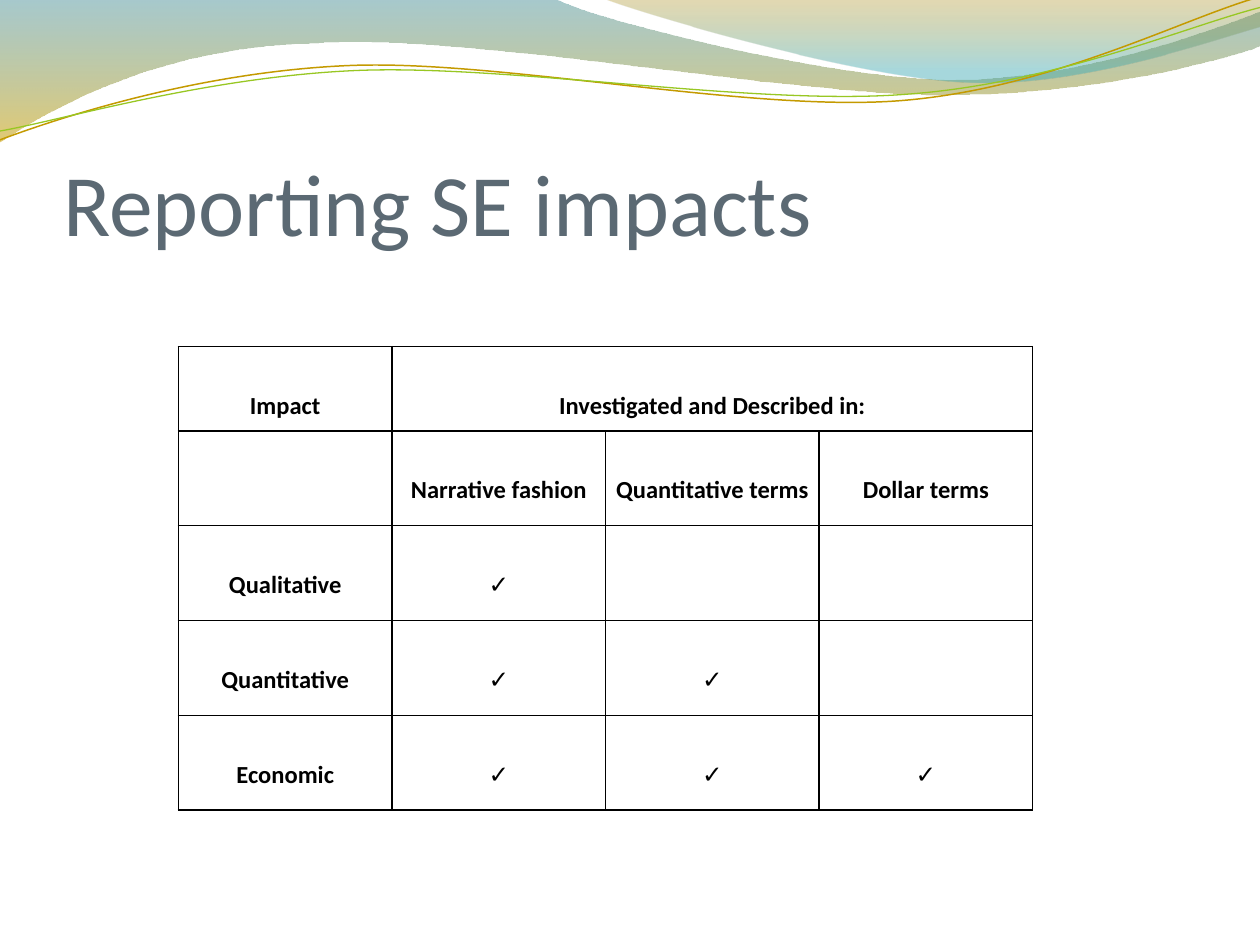
from math import cos, radians, sin

from lxml.etree import SubElement
from pptx import Presentation
from pptx.dml.color import RGBColor
from pptx.enum.text import MSO_ANCHOR, MSO_AUTO_SIZE, PP_ALIGN
from pptx.oxml import parse_xml
from pptx.oxml.ns import nsdecls, qn
from pptx.util import Inches, Pt

FONT = "Calibri"
BLACK = RGBColor(0, 0, 0)
SLATE = RGBColor(0x5B, 0x69, 0x73)
TEAL = RGBColor(0x3B, 0x88, 0x90)
GOLD = RGBColor(0xC9, 0x9E, 0x00)
OLIVE = RGBColor(0xA4, 0x81, 0x00)
AQUA = RGBColor(0x3E, 0xA9, 0xB4)
AMBER = RGBColor(0xC4, 0x9A, 0x00)
GREEN = RGBColor(0x98, 0xC7, 0x23)

TITLE = "Reporting SE impacts"
CHECK = "✓"
ROWS = [
    ["Impact", "Investigated and Described in:", "", ""],
    ["", "Narrative fashion", "Quantitative terms", "Dollar terms"],
    ["Qualitative", CHECK, "", ""],
    ["Quantitative", CHECK, CHECK, ""],
    ["Economic", CHECK, CHECK, CHECK],
]
TABLE_LEFT, TABLE_TOP = Pt(102), Inches(2.75)
TABLE_WIDTH, TABLE_HEIGHT = Inches(6.78), Inches(3.68)
HEADER_HEIGHT = Inches(0.67)

# Each step is a point (x, y) or a cubic curve (x1, y1, x2, y2, x, y).
BANDS = [
    ([(0, 0), (4.4, -0.01), (4.76, 0.17, 6.64, 0.63, 7.58, 0.63),
      (8.53, 0.63, 9.58, 0.26, 10, 0.09), (10.01, 0.36),
      (9.83, 0.44, 8.7, 0.76, 7.46, 0.75), (6.22, 0.75, 3.82, 0.28, 2.57, 0.34),
      (1.29, 0.36, 0.46, 0.83, -0.01, 1.13), (0, 0)],
     [(0, TEAL, 45), (1, GOLD, 55)]),
    ([(4.79, -0.01), (5.09, 0.11, 6.82, 0.62, 7.69, 0.65),
      (8.56, 0.69, 9.61, 0.32, 10, 0.21), (10, 0), (4.79, -0.01)],
     [(0, OLIVE, 30), (0.8, AQUA, 45)]),
]
WAVE_TILT = -2.7
WAVES = [
    ([(0, 1.11), (0.48, 0.93, 1.58, 0.57, 2.77, 0.52),
      (3.95, 0.47, 5.93, 0.89, 7.13, 0.8), (8.33, 0.71, 9.38, 0.15, 9.98, -0.02)],
     (4.99, 0.58), AMBER, 0.85),
    ([(0, 1.04), (0.47, 0.96, 1.64, 0.61, 2.83, 0.56),
      (4.03, 0.51, 5.97, 0.84, 7.17, 0.75), (8.36, 0.67, 9.41, 0.21, 10, 0.06)],
     (5, 0.59), GREEN, 0.75),
]


def add_outline(s, steps, close):
    (start, *rest) = [(Inches(x), Inches(y)) for step in steps
                      for x, y in zip(step[::2], step[1::2])]
    builder = s.shapes.build_freeform(*start)
    builder.add_line_segments(rest, close=close)
    sp = builder.convert_to_shape()
    sp.shadow.inherit = False
    lines = iter(sp._element.findall(".//" + qn("a:lnTo")))
    for step in steps[1:]:
        line = next(lines)
        if len(step) == 6:
            line.tag = qn("a:cubicBezTo")
            for _ in range(2):
                extra = next(lines)
                line.append(extra[0])
                extra.getparent().remove(extra)
    return sp


def add_band(s, steps, stops):
    sp = add_outline(s, steps, True)
    sp.line.fill.background()
    sp.fill.gradient()
    sp.fill.gradient_angle = 270
    for stop, (position, color, _) in zip(sp.fill.gradient_stops, stops):
        stop.position = position
        stop.color.rgb = color
    clrs = sp._element.spPr.findall(".//" + qn("a:srgbClr"))
    for clr, (_, _, opacity) in zip(clrs, stops):
        SubElement(clr, qn("a:alpha")).set("val", str(opacity * 1000))


def turn(step, center, degrees):
    (cx, cy), a = center, radians(degrees)
    turned = []
    for x, y in zip(step[::2], step[1::2]):
        dx, dy = x - cx, y - cy
        turned += [cx + dx * cos(a) - dy * sin(a), cy + dx * sin(a) + dy * cos(a)]
    return turned


def add_wave(s, steps, center, color, width):
    sp = add_outline(s, [turn(step, center, -WAVE_TILT) for step in steps], False)
    sp.rotation = WAVE_TILT
    sp.fill.background()
    sp.line.color.rgb = color
    sp.line.width = Pt(width)


def add_title(s):
    sp = s.shapes.title
    sp.left, sp.top, sp.width, sp.height = map(Inches, (0.5, 0.77, 9, 1.25))
    tf = sp.text_frame
    tf.text = TITLE
    tf.auto_size = MSO_AUTO_SIZE.NONE
    tf.vertical_anchor = MSO_ANCHOR.BOTTOM
    tf.margin_left = tf.margin_right = tf.margin_bottom = 0
    tf.margin_top = Inches(0.05)
    p = tf.paragraphs[0]
    p.alignment = PP_ALIGN.LEFT
    p.font.name, p.font.size, p.font.color.rgb = FONT, Pt(50), SLATE


def format_cell(cell, text):
    cell.fill.background()
    cell.margin_left = cell.margin_right = Inches(0.07)
    cell.margin_top = cell.margin_bottom = 0
    tcPr = cell._tc.get_or_add_tcPr()
    for i, side in enumerate("LRTB"):
        tcPr.insert(i, parse_xml(
            f'<a:ln{side} {nsdecls("a")} w="{Pt(1)}"><a:solidFill>'
            f'<a:srgbClr val="{BLACK}"/></a:solidFill></a:ln{side}>'))
    if not text:
        return
    cell.text = text
    p = cell.text_frame.paragraphs[0]
    p.alignment = PP_ALIGN.CENTER
    p.line_spacing = 2.5
    p.space_before = p.space_after = Pt(6)
    p.font.name, p.font.size, p.font.bold = FONT, Pt(14), True
    p.font.color.rgb = BLACK


def add_impact_table(s):
    cols = len(ROWS[0])
    body_height = (TABLE_HEIGHT - HEADER_HEIGHT) // (len(ROWS) - 1)
    table = s.shapes.add_table(len(ROWS), cols, TABLE_LEFT, TABLE_TOP,
                               TABLE_WIDTH, TABLE_HEIGHT).table
    table.first_row = table.horz_banding = False
    for r, texts in enumerate(ROWS):
        table.rows[r].height = body_height if r else HEADER_HEIGHT
        for c, text in enumerate(texts):
            format_cell(table.cell(r, c), text)
    table.cell(0, 1).merge(table.cell(0, cols - 1))


def main():
    prs = Presentation()
    prs.slide_width, prs.slide_height = Inches(10), Inches(7.5)
    s = prs.slides.add_slide(prs.slide_layouts[5])
    for band in BANDS:
        add_band(s, *band)
    for wave in WAVES:
        add_wave(s, *wave)
    add_title(s)
    add_impact_table(s)
    prs.save("out.pptx")


if __name__ == "__main__":
    main()
